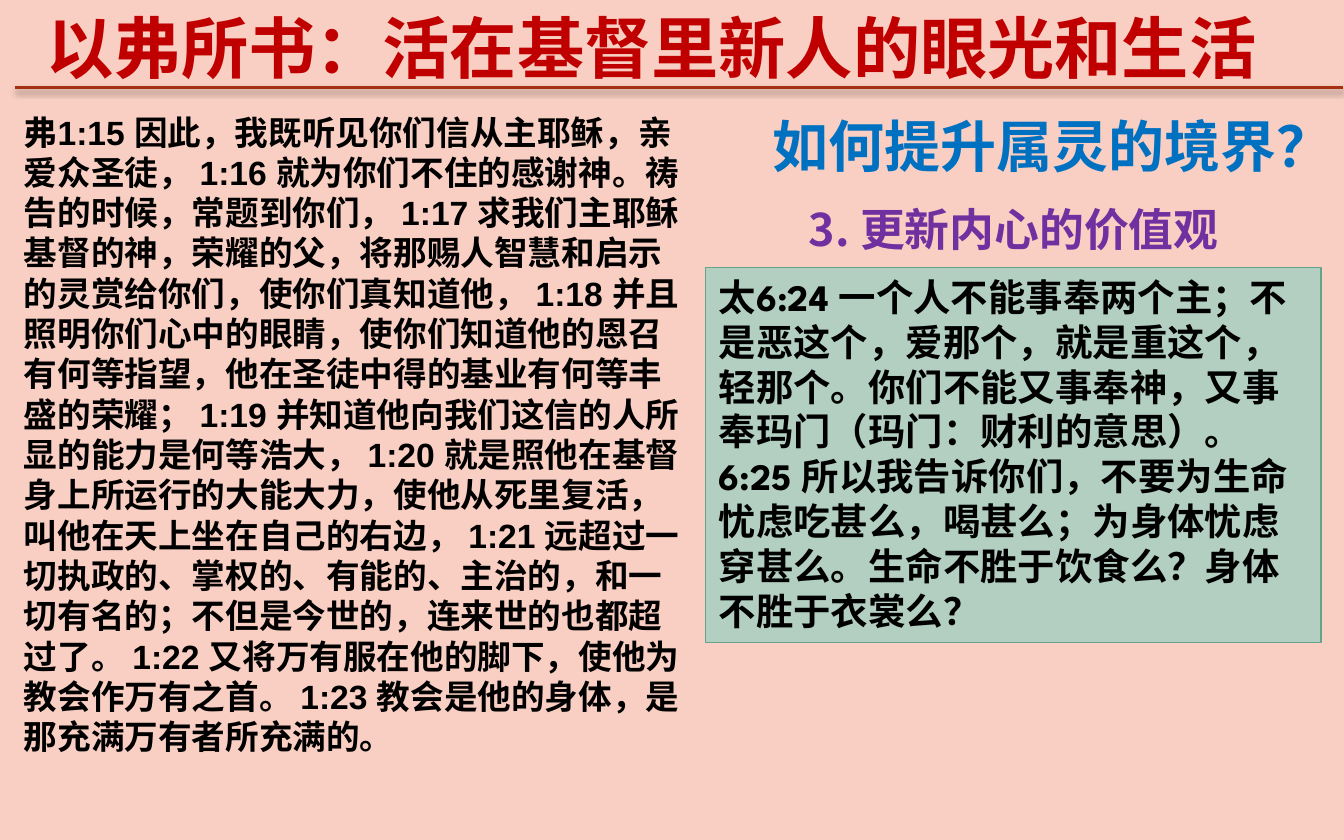
from dataclasses import dataclass

from lxml import etree
from pptx import Presentation
from pptx.dml.color import RGBColor
from pptx.enum.shapes import MSO_CONNECTOR, MSO_SHAPE
from pptx.enum.text import MSO_ANCHOR, MSO_AUTO_SIZE, PP_ALIGN
from pptx.oxml.ns import qn
from pptx.util import Inches, Pt


@dataclass(frozen=True)
class Theme:
    background: str = "F9CFC3"
    rule: str = "A53010"
    title: str = "C00000"
    question: str = "0070C0"
    point: str = "7030A0"
    body: str = "000000"
    panel: str = "B3CFC2"
    panel_border: str = "65A48B"
    title_size: int = 36
    question_size: int = 30
    point_size: int = 24
    verse_size: int = 20
    passage_size: int = 18
    sans: str = "Arial"
    display: str = "League Spartan"
    chinese: str = "Noto Sans CJK SC"


THEME = Theme()

PASSAGE = (
    "弗1:15 因此，我既听见你们信从主耶稣，亲爱众圣徒， "
    "1:16 就为你们不住的感谢神。祷告的时候，常题到你们， "
    "1:17 求我们主耶稣基督的神，荣耀的父，将那赐人智慧和启示的灵赏给你们，使你们真知道他， "
    "1:18 并且照明你们心中的眼睛，使你们知道他的恩召有何等指望，他在圣徒中得的基业有何等丰盛的荣耀； "
    "1:19 并知道他向我们这信的人所显的能力是何等浩大， "
    "1:20 就是照他在基督身上所运行的大能大力，使他从死里复活，叫他在天上坐在自己的右边， "
    "1:21 远超过一切执政的、掌权的、有能的、主治的，和一切有名的；不但是今世的，连来世的也都超过了。 "
    "1:22 又将万有服在他的脚下，使他为教会作万有之首。 "
    "1:23 教会是他的身体，是那充满万有者所充满的。"
)
VERSE = (
    "太6:24 一个人不能事奉两个主；不是恶这个，爱那个，就是重这个，轻那个。"
    "你们不能又事奉神，又事奉玛门（玛门：财利的意思）。 "
    "6:25 所以我告诉你们，不要为生命忧虑吃甚么，喝甚么；为身体忧虑穿甚么。"
    "生命不胜于饮食么？身体不胜于衣裳么？"
)


def color(value):
    return RGBColor.from_string(value)


def write_text(shape, text, size, font_name, text_color, space_after=0):
    """Fill the shape with one bold, left-aligned paragraph and return it."""
    frame = shape.text_frame
    frame.word_wrap = True
    frame.auto_size = MSO_AUTO_SIZE.SHAPE_TO_FIT_TEXT
    frame.text = text
    paragraph = frame.paragraphs[0]
    paragraph.alignment = PP_ALIGN.LEFT
    paragraph.space_after = Pt(space_after)
    font = paragraph.runs[0].font
    font.size, font.bold, font.name = Pt(size), True, font_name
    font.color.rgb = color(text_color)
    east_asian = etree.SubElement(paragraph.runs[0]._r.rPr, qn("a:ea"))
    east_asian.set("typeface", THEME.chinese)
    return paragraph


def add_text(slide, box, *text_style):
    text_box = slide.shapes.add_textbox(*map(Inches, box))
    return write_text(text_box, *text_style)


def number_paragraph(paragraph, start, indent):
    properties = paragraph._p.get_or_add_pPr()
    properties.set("marL", str(Inches(indent)))
    properties.set("indent", str(Inches(-indent)))
    numbering = etree.SubElement(properties, qn("a:buAutoNum"))
    numbering.set("type", "arabicPeriod")
    numbering.set("startAt", str(start))


def add_rule(slide, left, top, width):
    """Draw the horizontal line under the title, with its soft shadow."""
    rule = slide.shapes.add_connector(
        MSO_CONNECTOR.STRAIGHT,
        Inches(left), Inches(top), Inches(left + width), Inches(top),
    )
    rule.line.color.rgb = color(THEME.rule)
    rule.line.width = Pt(1.75)
    effects = etree.SubElement(rule._element.spPr, qn("a:effectLst"))
    shadow = etree.SubElement(
        effects, qn("a:outerShdw"),
        blurRad=str(Pt(3)), dist=str(Pt(2)), dir=str(90 * 60000), rotWithShape="0",
    )
    shade = etree.SubElement(shadow, qn("a:srgbClr"), val="000000")
    etree.SubElement(shade, qn("a:alpha"), val="25000")


def add_header(slide, left, top, width, height):
    add_rule(slide, 0.11, top + 0.65, 9.88)
    add_text(slide, (left, top, width, height), "以弗所书：活在基督里新人的眼光和生活",
             THEME.title_size, THEME.sans, THEME.title)


def add_passage(slide, *box):
    add_text(slide, box, PASSAGE, THEME.passage_size, THEME.sans, THEME.body, 12)


def add_verse_panel(slide, *box):
    panel = slide.shapes.add_shape(MSO_SHAPE.RECTANGLE, *map(Inches, box))
    panel.shadow.inherit = False
    panel.fill.solid()
    panel.fill.fore_color.rgb = color(THEME.panel)
    panel.line.color.rgb = color(THEME.panel_border)
    panel.line.width = Pt(0.75)
    panel.text_frame.vertical_anchor = MSO_ANCHOR.TOP
    write_text(panel, VERSE, THEME.verse_size, THEME.display, THEME.body, 6)


def add_lesson(slide, left, top, width):
    """Stack the question, the numbered point and the verse panel."""
    add_text(slide, (left + 0.4, top, 4.32, 0.61), "如何提升属灵的境界？",
             THEME.question_size, THEME.chinese, THEME.question)
    point = add_text(slide, (left + 0.67, top + 0.67, 3.42, 0.5), " 更新内心的价值观",
                     THEME.point_size, THEME.display, THEME.point, 18)
    number_paragraph(point, start=3, indent=0.3)
    add_verse_panel(slide, left, top + 1.21, width, 2.79)


def main():
    presentation = Presentation()
    presentation.slide_width, presentation.slide_height = Inches(10), Inches(6.25)
    slide = presentation.slides.add_slide(presentation.slide_layouts[6])
    slide.background.fill.solid()
    slide.background.fill.fore_color.rgb = color(THEME.background)
    add_header(slide, 0.25, 0, 9.33, 0.71)
    add_passage(slide, 0.08, 0.78, 5.08, 4.95)
    add_lesson(slide, 5.25, 0.78, 4.58)
    presentation.save("out.pptx")


if __name__ == "__main__":
    main()
